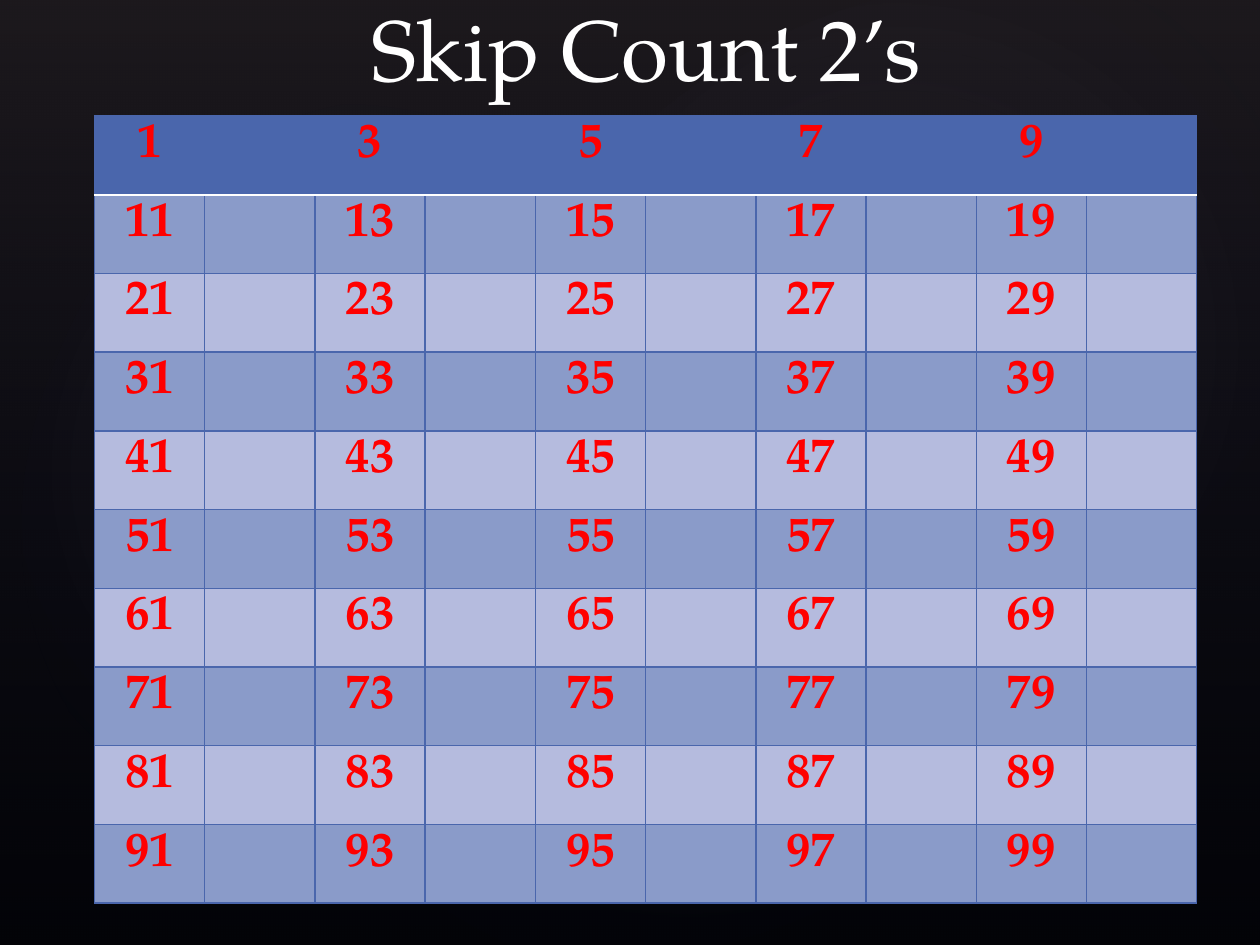
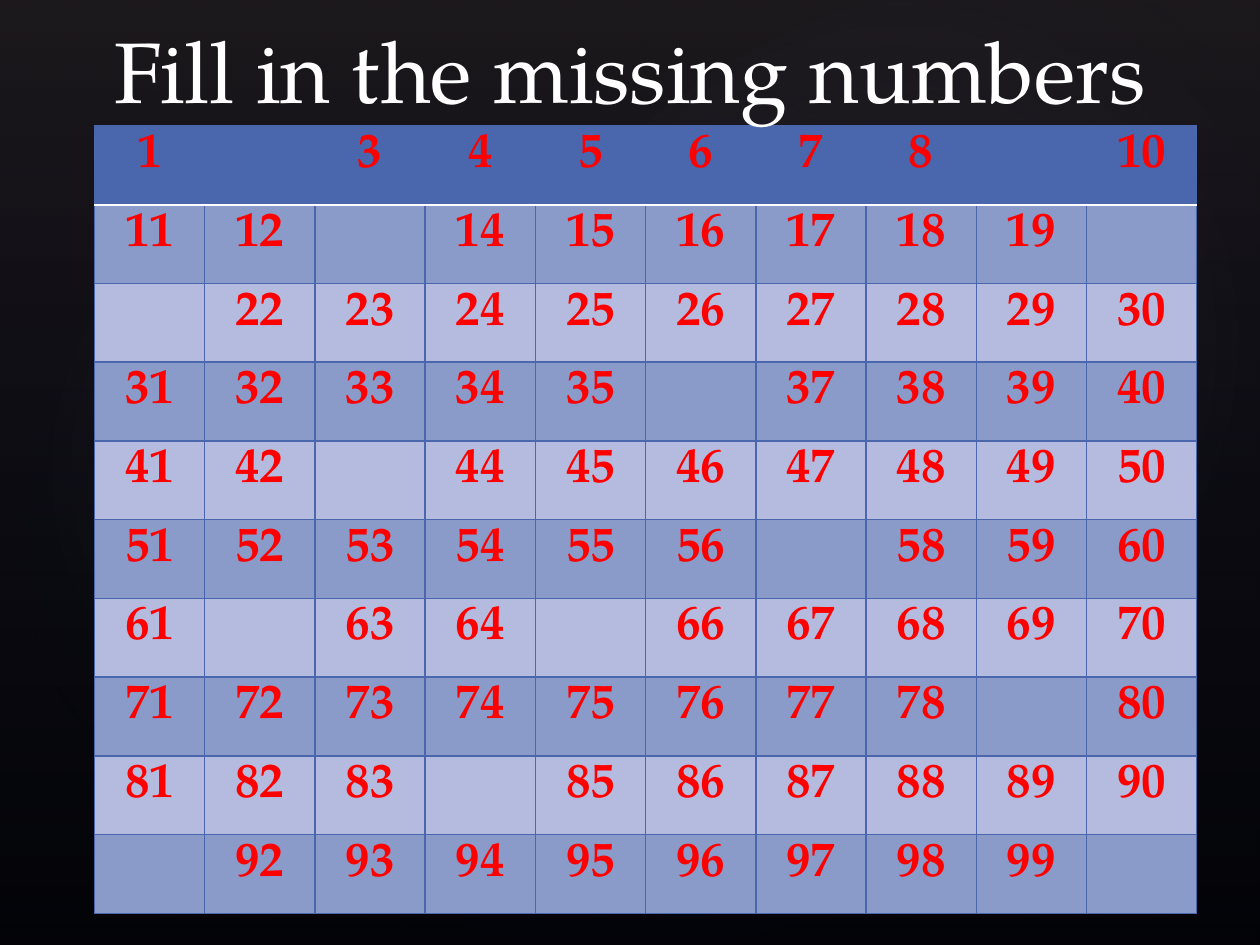
"""Build two hundred-chart slides for counting practice."""
from dataclasses import dataclass

from pptx import Presentation
from pptx.dml.color import RGBColor
from pptx.enum.shapes import MSO_SHAPE as Preset
from pptx.enum.text import MSO_ANCHOR as Anchor, MSO_AUTO_SIZE as AutoSize, PP_ALIGN as Align
from pptx.oxml import parse_xml
from pptx.oxml.ns import nsdecls, qn
from pptx.util import Inches, Pt

STEPS_ACROSS, STEPS_DOWN = 80, 60
STEP = Inches(10) // STEPS_ACROSS
SIDE = 10
COLUMN_STEPS, ROW_STEPS = 7, 5


@dataclass(frozen=True)
class Theme:
    """Colours, font and sizes shared by the slides."""
    font: str = "TeX Gyre Pagella"
    title_size: int = 49
    number_size: int = 28
    ground: str = "000000"
    title: str = "FFFFFF"
    number: str = "FF0000"
    header: str = "4A66AC"
    dark_band: str = "8A9BC9"
    light_band: str = "B5BBDE"
    header_rule: str = "FFFFFF"
    haze_top: str = "504652"
    haze_bottom: str = "242852"
    glow: str = "C4BCC6"


THEME = Theme()
DOWNWARD = '<a:lin ang="5400000" scaled="0"/>'
OUTWARD = ('<a:path path="circle"><a:fillToRect l="50000" t="50000" '
           'r="50000" b="50000"/></a:path>')
GLOWS = [
    ((12, 9.12, 63.36, 49.92), 328.7, 7),
    ((-2.4, 10.24, 48.48, 39.2), 294.3, 8),
    ((28.64, 1.04, 56.72, 41.6), 328.7, 8),
]
MISSING = {2, 9, 13, 20, 21, 36, 43, 57, 62, 65, 79, 84, 91, 100}


def steps(*counts):
    """Turn counts of grid steps into lengths."""
    return [round(count * STEP) for count in counts]


def apply(target, values):
    """Set each named attribute on the target."""
    for name, value in values.items():
        setattr(target, name, value)


def write(para, text, size, colour, bold=False):
    """Write one centred span in the shared font."""
    para.alignment = Align.CENTER
    span = para.add_run()
    span.text = text
    apply(span.font, {"name": THEME.font, "size": Pt(size), "bold": bold})
    span.font.color.rgb = RGBColor.from_string(colour)


def gradient(stops, direction):
    """Make a gradient fill from position, colour and opacity stops."""
    marks = "".join(
        f'<a:gs pos="{position * 1000}"><a:srgbClr val="{colour}">'
        f'<a:alpha val="{opacity * 1000}"/></a:srgbClr></a:gs>'
        for position, colour, opacity in stops)
    return parse_xml(f'<a:gradFill {nsdecls("a")} rotWithShape="1">'
                     f'<a:gsLst>{marks}</a:gsLst>{direction}</a:gradFill>')


def add_haze(page, preset, area, fill, rotation=0):
    """Add an outlineless shape with a translucent gradient."""
    shape = page.shapes.add_shape(preset, *steps(*area))
    shape.rotation = rotation
    shape.shadow.inherit = False
    shape.line.fill.background()
    shape.fill.background()
    properties = shape.element.spPr
    properties.replace(properties.find(qn("a:noFill")), fill)
    return shape


def dress_master(deck, page):
    """Give the master its black ground, haze and glows."""
    master = deck.slide_master
    ground = master.background.fill
    ground.solid()
    ground.fore_color.rgb = RGBColor.from_string(THEME.ground)
    veil = gradient([(0, THEME.haze_top, 36), (100, THEME.haze_bottom, 10)], DOWNWARD)
    hazes = [add_haze(page, Preset.RECTANGLE, (0, 0, STEPS_ACROSS, STEPS_DOWN), veil)]
    for area, rotation, opacity in GLOWS:
        fill = gradient([(0, THEME.glow, opacity), (58, THEME.haze_bottom, 0)], OUTWARD)
        hazes.append(add_haze(page, Preset.OVAL, area, fill, rotation))
    for order, haze in enumerate(hazes):
        haze.element.nvSpPr.cNvPr.set("id", str(100 + order))
        master.shapes.element.insert(2 + order, haze.element)


def add_title(page, text, area):
    """Place the title placeholder in front of the chart."""
    box = page.shapes.title
    apply(box, dict(zip(("left", "top", "width", "height"), steps(*area))))
    apply(box.text_frame, {"vertical_anchor": Anchor.BOTTOM, "word_wrap": True,
                           "auto_size": AutoSize.NONE})
    write(box.text_frame.paragraphs[0], text, THEME.title_size, THEME.title)
    page.shapes.element.append(box.element)


def add_border(cell, side, colour, width):
    """Draw one side of a table cell."""
    cell._tc.get_or_add_tcPr().append(parse_xml(
        f'<a:ln{side} {nsdecls("a")} w="{Pt(width)}"><a:solidFill>'
        f'<a:srgbClr val="{colour}"/></a:solidFill></a:ln{side}>'))


def style_cell(cell, row):
    """Band a cell by its row, with a white rule below the header."""
    ruled = {0: "B", 1: "T"}.get(row)
    for side in "LRTB":
        rule = (THEME.header_rule, 1.5) if side == ruled else (THEME.header, 1)
        add_border(cell, side, *rule)
    band = THEME.dark_band if row % 2 else THEME.light_band
    cell.fill.solid()
    cell.fill.fore_color.rgb = RGBColor.from_string(band if row else THEME.header)


def add_hundred_chart(page, top, missing):
    """Add the 1 to 100 table, leaving the missing numbers blank."""
    area = steps(6, top, SIDE * COLUMN_STEPS, SIDE * ROW_STEPS)
    table = page.shapes.add_table(SIDE, SIDE, *area).table
    apply(table, {"first_row": False, "horz_banding": False})
    for index, cell in enumerate(table.iter_cells()):
        style_cell(cell, index // SIDE)
        number = index + 1
        if number not in missing:
            write(cell.text_frame.paragraphs[0], str(number),
                  THEME.number_size, THEME.number, bold=True)


def main():
    """Build and save the deck."""
    deck = Presentation()
    apply(deck, {"slide_width": STEP * STEPS_ACROSS, "slide_height": STEP * STEPS_DOWN})
    title_only = deck.slide_layouts.get_by_name("Title Only")
    charts = [
        ("Skip Count 2’s", (8, -1.36, 66, 8), 7.36, set(range(2, 101, 2))),
        ("Fill in the missing numbers", (0, 0.08, 80, 8), 8, MISSING),
    ]
    for title, title_area, chart_top, missing in charts:
        page = deck.slides.add_slide(title_only)
        add_hundred_chart(page, chart_top, missing)
        add_title(page, title, title_area)
    dress_master(deck, page)
    deck.save("out.pptx")


if __name__ == "__main__":
    main()
